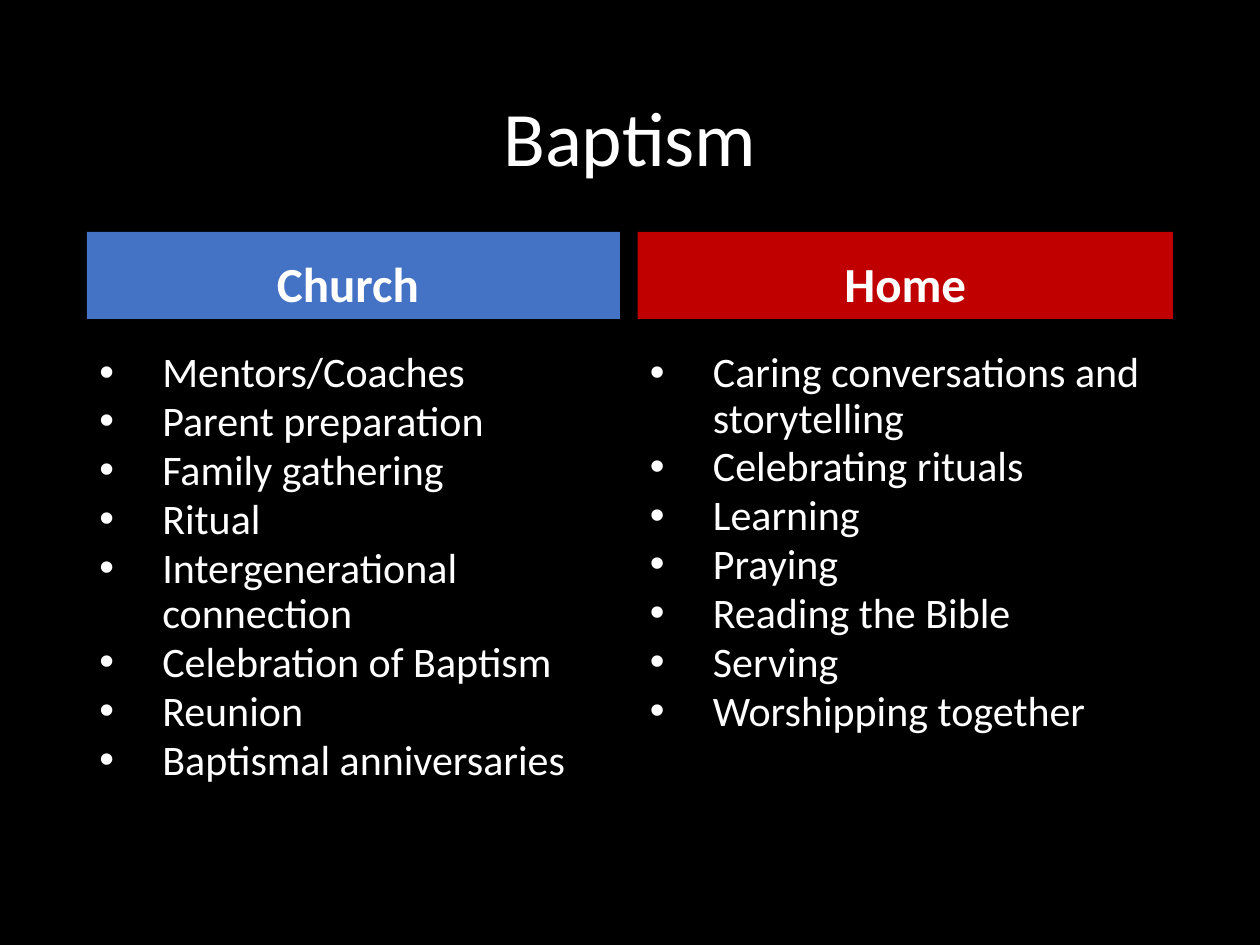
from dataclasses import dataclass

from lxml.etree import SubElement
from pptx import Presentation
from pptx.dml.color import RGBColor as RGB
from pptx.enum.shapes import MSO_SHAPE as Shape
from pptx.enum.text import MSO_ANCHOR as Anchor, PP_ALIGN as Align
from pptx.oxml.ns import qn
from pptx.util import Inches, Pt

TITLE = "Baptism"
COLUMNS = [
    {
        "heading": "Church ",
        "color": "4472C4",
        "left": 0.69,
        "width": 4.23,
        "practices": [
            "Mentors/Coaches",
            "Parent preparation",
            "Family gathering",
            "Ritual",
            "Intergenerational connection",
            "Celebration of Baptism",
            "Reunion",
            "Baptismal anniversaries",
        ],
    },
    {
        "heading": "Home",
        "color": "C00000",
        "left": 5.06,
        "width": 4.25,
        "practices": [
            "Caring conversations and storytelling",
            "Celebrating rituals",
            "Learning",
            "Praying",
            "Reading the Bible",
            "Serving",
            "Worshipping together",
        ],
    },
]


@dataclass(frozen=True)
class Theme:
    font: str = "Calibri"
    background: str = "000000"
    text: str = "FFFFFF"
    title_size: int = 44
    heading_size: int = 28
    practice_size: int = 24
    line_spacing: float = 0.9
    practice_gap: int = 2


THEME = Theme()
TITLE_TOP, TITLE_HEIGHT = 0.4, 1.45
HEADING_TOP, HEADING_HEIGHT = 1.84, 0.69
LIST_TOP, LIST_HEIGHT = 2.74, 4.03
BULLET_INDENT = 0.5


def add_text(paragraph, text, size, bold=False, align=Align.LEFT):
    paragraph.alignment = align
    paragraph.line_spacing = THEME.line_spacing
    run = paragraph.add_run()
    run.text = text
    run.font.name = THEME.font
    run.font.size = Pt(size)
    run.font.bold = bold
    run.font.color.rgb = RGB.from_string(THEME.text)


def add_bullet(paragraph):
    properties = paragraph._p.get_or_add_pPr()
    properties.set("marL", str(Inches(BULLET_INDENT)))
    properties.set("indent", str(-Inches(BULLET_INDENT)))
    SubElement(properties, qn("a:buFont"), typeface="Arial")
    SubElement(properties, qn("a:buChar"), char="•")


def add_text_frame(slide, left, top, width, height, anchor=Anchor.TOP):
    box = slide.shapes.add_textbox(*map(Inches, (left, top, width, height)))
    frame = box.text_frame
    frame.word_wrap = True
    frame.vertical_anchor = anchor
    return frame


def add_heading(slide, column):
    place = column["left"], HEADING_TOP, column["width"], HEADING_HEIGHT
    band = slide.shapes.add_shape(Shape.RECTANGLE, *map(Inches, place))
    band.shadow.inherit = False
    band.fill.solid()
    band.fill.fore_color.rgb = RGB.from_string(column["color"])
    band.line.fill.background()
    frame = band.text_frame
    frame.word_wrap = True
    frame.vertical_anchor = Anchor.BOTTOM
    add_text(frame.paragraphs[0], column["heading"], THEME.heading_size,
             bold=True, align=Align.CENTER)


def add_practices(slide, column):
    frame = add_text_frame(slide, column["left"], LIST_TOP,
                           column["width"], LIST_HEIGHT)
    for index, practice in enumerate(column["practices"]):
        paragraph = frame.add_paragraph() if index else frame.paragraphs[0]
        add_bullet(paragraph)
        if index:
            paragraph.space_before = Pt(THEME.practice_gap)
        add_text(paragraph, practice, THEME.practice_size)


def main():
    deck = Presentation()
    deck.slide_width, deck.slide_height = Inches(10), Inches(7.5)
    slide = deck.slides.add_slide(deck.slide_layouts[6])
    slide.background.fill.solid()
    slide.background.fill.fore_color.rgb = RGB.from_string(THEME.background)

    first, last = COLUMNS[0], COLUMNS[-1]
    title_width = last["left"] + last["width"] - first["left"]
    title = add_text_frame(slide, first["left"], TITLE_TOP, title_width,
                           TITLE_HEIGHT, Anchor.MIDDLE)
    add_text(title.paragraphs[0], TITLE, THEME.title_size, align=Align.CENTER)

    for column in COLUMNS:
        add_heading(slide, column)
        add_practices(slide, column)
    deck.save("out.pptx")


if __name__ == "__main__":
    main()
